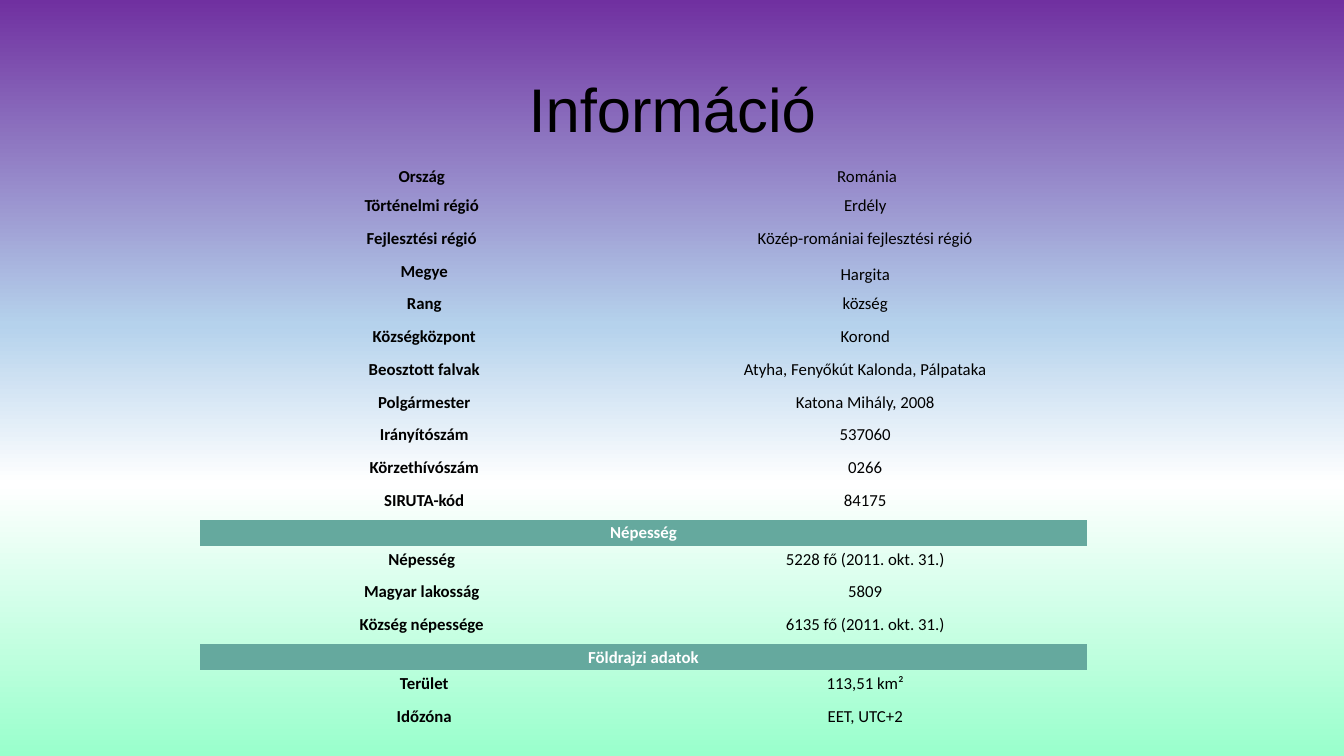
from lxml.etree import SubElement
from pptx import Presentation
from pptx.dml.color import RGBColor
from pptx.enum.text import MSO_ANCHOR, PP_ALIGN
from pptx.oxml.ns import qn
from pptx.util import Pt

PX = 914400 / 100.8
BLACK = RGBColor(0x00, 0x00, 0x00)
WHITE = RGBColor(0xFF, 0xFF, 0xFF)
TEAL = RGBColor(0x65, 0xA9, 0x9E)
SKY_STOPS = [
    (0, RGBColor(0x70, 0x30, 0xA0)),
    (43, RGBColor(0xB5, 0xD2, 0xEC)),
    (64, WHITE),
    (100, RGBColor(0x99, 0xFF, 0xCC)),
]
NO_STYLE_NO_GRID = "{2D5ABB26-0587-4C30-8999-92F81FD0307C}"
ROW_TOTAL, BAND_HEIGHT = 576, 26

# Label, value and the label's right margin; a band has only a label
FACTS = [
    ("Ország", " Románia", 7),
    ("Történelmi régió", "Erdély", 7),
    ("Fejlesztési régió", "Közép-romániai fejlesztési régió", 7),
    ("Megye", "Hargita", 2),
    ("Rang", "község", 2),
    ("Községközpont", "Korond", 2),
    ("Beosztott falvak", "Atyha, Fenyőkút Kalonda, Pálpataka", 2),
    ("Polgármester", "Katona Mihály, 2008", 2),
    ("Irányítószám", "537060", 2),
    ("Körzethívószám", "0266", 2),
    ("SIRUTA-kód", "84175", 2),
    ("Népesség", None, 7),
    ("Népesség", "5228 fő (2011. okt. 31.)", 7),
    ("Magyar lakosság", "5809", 7),
    ("Község népessége", "6135 fő (2011. okt. 31.)", 7),
    ("Földrajzi adatok", None, 7),
    ("Terület", "113,51 km²", 2),
    ("Időzóna", "EET, UTC+2", 2),
]
MIDDLE_TEXTS = {"Ország", " Románia", "Hargita"}


def px(length):
    return round(length * PX)


def write(frame, text, size, font_name, color, bold):
    frame.text = text
    paragraph = frame.paragraphs[0]
    paragraph.alignment = PP_ALIGN.CENTER
    font = paragraph.runs[0].font
    for name, value in {"size": Pt(size), "name": font_name, "bold": bold}.items():
        setattr(font, name, value)
    font.color.rgb = color
    return paragraph


deck = Presentation()
deck.slide_width, deck.slide_height = px(1344), px(756)
slide = deck.slides.add_slide(deck.slide_layouts[5])

# Background gradient, top to bottom
sky = slide.background.fill
sky.gradient()
sky.gradient_angle = 270
stop_list = next(slide.element.iter(qn("a:gsLst")))
for default_stop in list(stop_list):
    stop_list.remove(default_stop)
for percent, color in SKY_STOPS:
    stop = SubElement(stop_list, qn("a:gs"), pos=str(percent * 1000))
    SubElement(stop, qn("a:srgbClr"), val=str(color))

# Title
title = slide.shapes.title
for name, value in {"left": 93, "top": 40, "width": 1159, "height": 146}.items():
    setattr(title, name, px(value))
title.text_frame.vertical_anchor = MSO_ANCHOR.MIDDLE
heading = write(title.text_frame, "Információ", 44, "Arial", BLACK, False)
heading.line_spacing = 0.9

# Table without style or grid
facts_frame = slide.shapes.add_table(len(FACTS), 2, px(200), px(160), px(887), px(ROW_TOTAL))
facts_table = facts_frame.table
facts_table.first_row = facts_table.horz_banding = False
next(facts_frame.element.iter(qn("a:tableStyleId"))).text = NO_STYLE_NO_GRID

band_count = sum(value is None for _, value, _ in FACTS)
fact_height = (ROW_TOTAL - band_count * BAND_HEIGHT) / (len(FACTS) - band_count)

# Rows: a merged teal band, or a bold label beside its value
for row, (label, value, label_right) in enumerate(FACTS):
    is_band = value is None
    facts_table.rows[row].height = px(BAND_HEIGHT if is_band else fact_height)
    if is_band:
        facts_table.cell(row, 0).merge(facts_table.cell(row, 1))
    for column, text in enumerate([label] if is_band else [label, value]):
        cell = facts_table.cell(row, column)
        edge = 1 if is_band else 3
        margins = {
            "margin_left": 7,
            "margin_top": edge,
            "margin_right": label_right if column == 0 else 7,
            "margin_bottom": edge,
        }
        for name, margin in margins.items():
            setattr(cell, name, px(margin))
        is_middle = is_band or text in MIDDLE_TEXTS
        cell.vertical_anchor = MSO_ANCHOR.MIDDLE if is_middle else MSO_ANCHOR.TOP
        if is_band:
            cell.fill.solid()
            cell.fill.fore_color.rgb = TEAL
        else:
            cell.fill.background()
        write(cell.text_frame, text, 12, "Calibri", WHITE if is_band else BLACK, column == 0)

deck.save("out.pptx")
